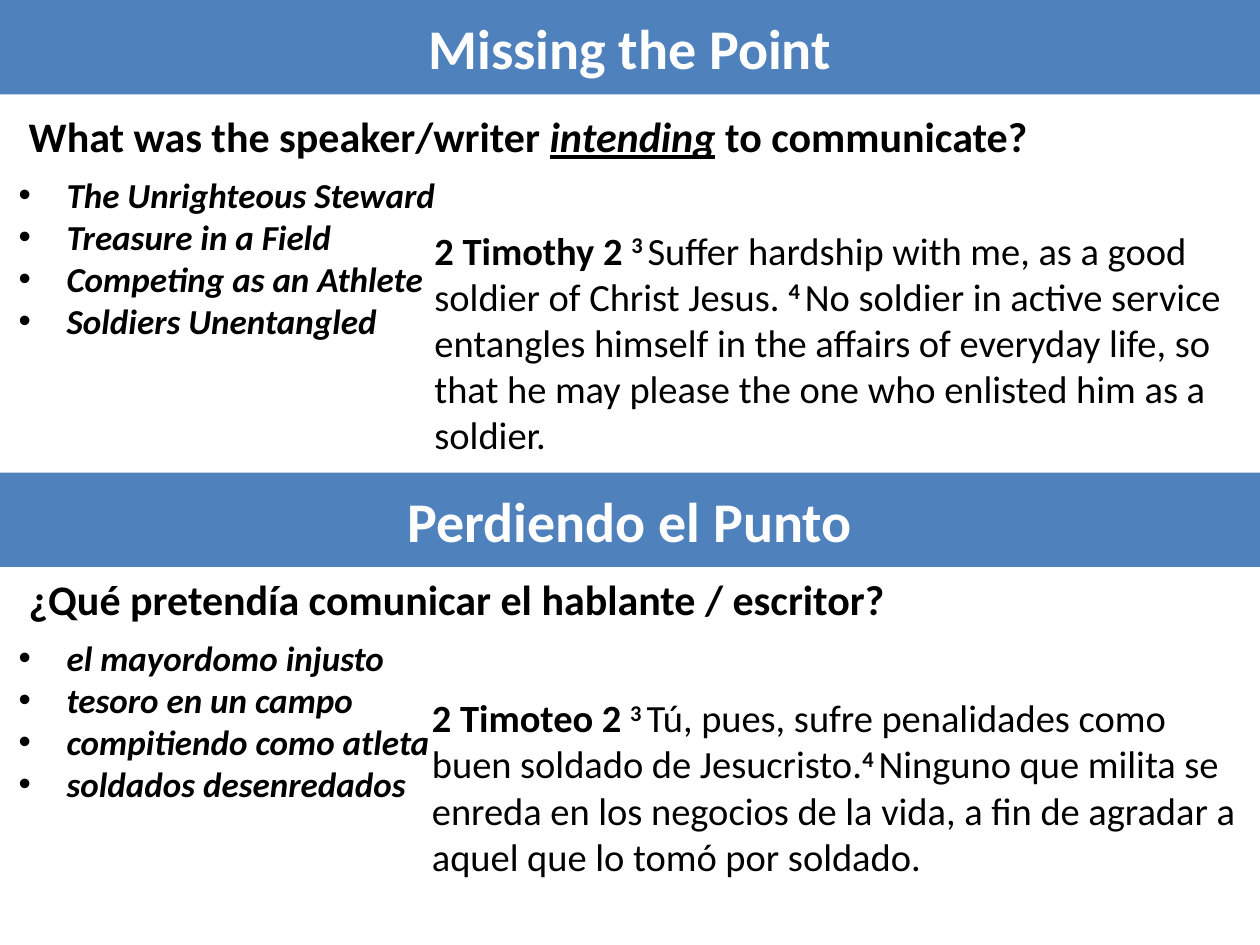
from lxml.etree import SubElement
from pptx import Presentation
from pptx.dml.color import RGBColor
from pptx.enum.shapes import MSO_SHAPE as Shape
from pptx.enum.text import MSO_ANCHOR as Anchor, MSO_AUTO_SIZE as AutoSize, PP_ALIGN as Align
from pptx.oxml.ns import qn
from pptx.util import Inches, Pt

BLUE = RGBColor(0x4F, 0x81, 0xBD)
BLACK = RGBColor(0, 0, 0)
WHITE = RGBColor(255, 255, 255)
FONT = "Calibri"
WIDTH, HEIGHT = 10, 7.5
BAND_HEIGHT = HEIGHT / 10
INDENT = 0.38

PLAIN, BOLD, EMPHASIS, VERSE = "plain", "bold", "emphasis", "verse"

SECTIONS = [
    {
        "title": "Missing the Point",
        "question": [
            ("What was the speaker/writer ", BOLD),
            ("intending", EMPHASIS),
            (" to communicate?", BOLD),
        ],
        "question_top": 0.83,
        "examples": [
            "The Unrighteous Steward",
            "Treasure in a Field",
            "Competing as an Athlete",
            "Soldiers Unentangled",
        ],
        "passage": [
            ("2 Timothy 2 ", BOLD),
            ("3 ", VERSE),
            ("Suffer hardship with me, as a good soldier of Christ Jesus. ", PLAIN),
            ("4 ", VERSE),
            ("No soldier in active service entangles himself in the affairs of "
             "everyday life, so that he may please the one who enlisted him as a soldier.", PLAIN),
        ],
        "passage_box": (3.35, 1.75, 6.66, 1.95),
    },
    {
        "title": "Perdiendo el Punto",
        "question": [("¿Qué pretendía comunicar el hablante / escritor?", BOLD)],
        "question_top": 0.75,
        "examples": [
            "el mayordomo injusto",
            "tesoro en un campo",
            "compitiendo como atleta",
            "soldados desenredados",
        ],
        "passage": [
            ("2 Timoteo 2 ", BOLD),
            ("3 ", VERSE),
            ("Tú, pues, sufre penalidades como buen soldado de Jesucristo.", PLAIN),
            ("4 ", VERSE),
            ("Ninguno que milita se enreda en los negocios de la vida, a fin de "
             "agradar a aquel que lo tomó por soldado.", PLAIN),
        ],
        "passage_box": (3.33, 1.71, 6.66, 1.58),
    },
]


def set_font(paragraph, size, color):
    paragraph.font.name = FONT
    paragraph.font.size = Pt(size)
    paragraph.font.color.rgb = color


def add_text_frame(slide, left, top, width, height):
    box = slide.shapes.add_textbox(*map(Inches, (left, top, width, height)))
    box.text_frame.word_wrap = True
    box.text_frame.auto_size = AutoSize.SHAPE_TO_FIT_TEXT
    return box.text_frame


def add_rich_text(slide, box, pieces, size):
    paragraph = add_text_frame(slide, *box).paragraphs[0]
    set_font(paragraph, size, BLACK)
    for text, style in pieces:
        run = paragraph.add_run()
        run.text = text
        run.font.bold = style != PLAIN
        if style == EMPHASIS:
            run.font.italic = run.font.underline = True
        if style == VERSE:
            run._r.get_or_add_rPr().set("baseline", "30000")


def add_bullets(slide, box, items, size):
    frame = add_text_frame(slide, *box)
    for index, item in enumerate(items):
        paragraph = frame.add_paragraph() if index else frame.paragraphs[0]
        paragraph.text = item
        set_font(paragraph, size, BLACK)
        paragraph.font.bold = paragraph.font.italic = True
        properties = paragraph._p.get_or_add_pPr()
        properties.set("marL", str(Inches(INDENT)))
        properties.set("indent", str(-Inches(INDENT)))
        bullet_font = SubElement(properties, qn("a:buFont"))
        bullet_font.set("typeface", "Arial")
        bullet = SubElement(properties, qn("a:buChar"))
        bullet.set("char", "•")
        properties.append(properties.find(qn("a:defRPr")))


def add_band(slide, top, title):
    band = slide.shapes.add_shape(
        Shape.RECTANGLE, 0, Inches(top), Inches(WIDTH), Inches(BAND_HEIGHT))
    band.shadow.inherit = False
    band.fill.solid()
    band.fill.fore_color.rgb = BLUE
    band.line.fill.background()
    band.text_frame.vertical_anchor = Anchor.MIDDLE
    paragraph = band.text_frame.paragraphs[0]
    paragraph.text = title
    paragraph.alignment = Align.CENTER
    set_font(paragraph, 32, WHITE)
    paragraph.font.bold = True


def main():
    presentation = Presentation()
    presentation.slide_width = Inches(WIDTH)
    presentation.slide_height = Inches(HEIGHT)
    slide = presentation.slides.add_slide(presentation.slide_layouts[6])
    for index, section in enumerate(SECTIONS):
        top = index * HEIGHT / len(SECTIONS)
        question_top = top + section["question_top"]
        left, offset, width, height = section["passage_box"]
        add_band(slide, top, section["title"])
        add_rich_text(slide, (0.13, question_top, 9.74, 0.5), section["question"], 24)
        add_bullets(slide, (0.05, question_top + 0.5, 4.28, 1.45), section["examples"], 20)
        add_rich_text(slide, (left, top + offset, width, height), section["passage"], 22)
    presentation.save("out.pptx")


if __name__ == "__main__":
    main()
